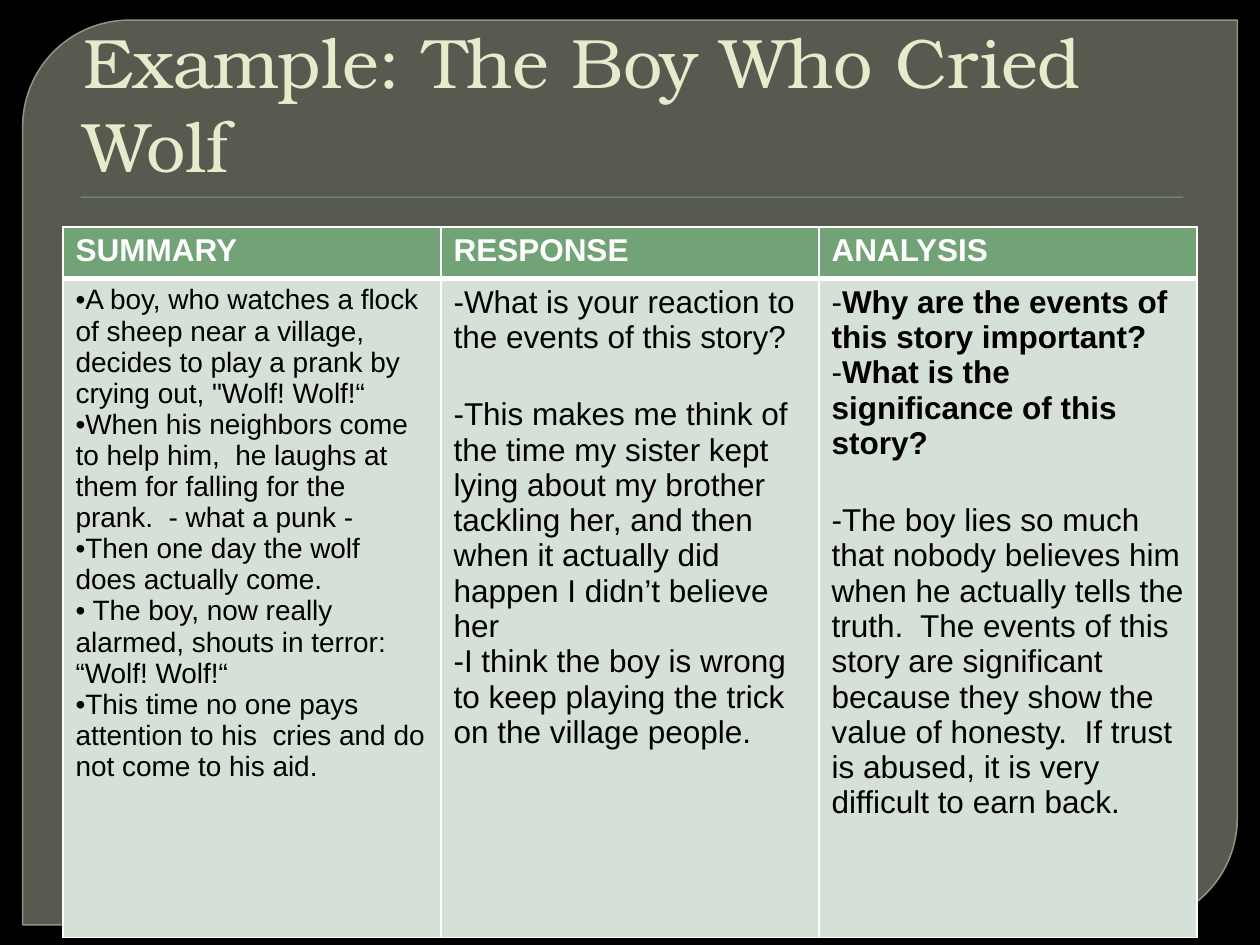
"""Build the summary, response and analysis slide for The Boy Who Cried Wolf."""
from dataclasses import dataclass

from lxml import etree
from pptx import Presentation
from pptx.dml.color import RGBColor
from pptx.enum.shapes import MSO_SHAPE
from pptx.enum.text import MSO_ANCHOR
from pptx.oxml.ns import qn
from pptx.util import Inches, Pt

PANEL_SHAPE = MSO_SHAPE.ROUND_2_DIAG_RECTANGLE
RULE_SHAPE = MSO_SHAPE.RECTANGLE
BOTTOM = MSO_ANCHOR.BOTTOM

BLACK = RGBColor(0x00, 0x00, 0x00)
WHITE = RGBColor(0xFF, 0xFF, 0xFF)
PANEL_FILL = RGBColor(0x88, 0x8B, 0x7B)
PANEL_LINE = RGBColor(0x9D, 0xA0, 0x90)
GREEN = RGBColor(0x72, 0xA3, 0x76)
PALE_GREEN = RGBColor(0xD5, 0xE0, 0xD6)
CREAM = RGBColor(0xE7, 0xEA, 0xCB)

BODY_FONT = "Arial"
TITLE_FONT = "TeX Gyre Bonum"
WIDTH, HEIGHT = Inches(10), Inches(7.5)
HEADER_HEIGHT, BODY_HEIGHT = Inches(0.41), Inches(5.23)
SECTION_GAP = Pt(24)


@dataclass(frozen=True)
class Point:
    """One bulleted paragraph."""
    text: str
    bold: bool = False
    new_section: bool = False


@dataclass(frozen=True)
class Column:
    """One table column with its heading and points."""
    heading: str
    bullet: str
    size: int
    points: tuple[Point, ...]


COLUMNS = (
    Column("SUMMARY", "•", 16, (
        Point("A boy, who watches a flock of sheep near a village, decides to play "
              "a prank by crying out, \"Wolf! Wolf!“"),
        Point("When his neighbors come to help him,  he laughs at them for falling "
              "for the prank.  - what a punk -"),
        Point("Then one day the wolf does actually come."),
        Point(" The boy, now really alarmed, shouts in terror: “Wolf! Wolf!“"),
        Point("This time no one pays attention to his  cries and do not come to his aid."),
    )),
    Column("RESPONSE", "-", 18, (
        Point("What is your reaction to the events of this story?"),
        Point("This makes me think of the time my sister kept lying about my brother  "
              "tackling her, and then when it actually did happen I didn’t believe her",
              new_section=True),
        Point("I think the boy is wrong to keep playing the trick on the village people."),
    )),
    Column("ANALYSIS", "-", 18, (
        Point("Why are the events of this story important?", bold=True),
        Point("What is the significance of this story?", bold=True),
        Point("The boy lies so much that nobody believes him when he actually tells the "
              "truth.  The events of this story are significant because they show the "
              "value of honesty.  If trust is abused, it is very difficult to earn back.",
              new_section=True),
    )),
)


def share(left: float, top: float, width: float, height: float) -> tuple[int, ...]:
    """Turn percentages of the slide into a position and size."""
    return tuple(int(part * whole / 100) for part, whole in
                 zip((left, top, width, height), (WIDTH, HEIGHT, WIDTH, HEIGHT)))


def set_opacity(fill_parent, percent: int) -> None:
    """Make the solid fill inside an element partly transparent."""
    colour = fill_parent.find(qn("a:solidFill"))[0]
    etree.SubElement(colour, qn("a:alpha"), val=str(percent * 1000))


def style_text(paragraph, font: str, size: float, colour: RGBColor, bold: bool = False) -> None:
    """Format every run of a paragraph."""
    for run in paragraph.runs:
        run.font.name, run.font.size, run.font.bold = font, Pt(size), bold
        run.font.color.rgb = colour


def style_cell(cell, fill: RGBColor, bottom_width: float = 1) -> None:
    """Give a cell white borders and a solid fill."""
    properties = cell._tc.get_or_add_tcPr()
    for side, width in (("lnL", 1), ("lnR", 1), ("lnT", 1), ("lnB", bottom_width)):
        border = etree.SubElement(properties, qn(f"a:{side}"), w=str(Pt(width)))
        solid = etree.SubElement(border, qn("a:solidFill"))
        etree.SubElement(solid, qn("a:srgbClr"), val=str(WHITE))
    cell.fill.solid()
    cell.fill.fore_color.rgb = fill


def add_backdrop(slide) -> None:
    """Draw the dark panel and the rule below the title."""
    slide.background.fill.solid()
    slide.background.fill.fore_color.rgb = BLACK

    panel = slide.shapes.add_shape(PANEL_SHAPE, *share(1.8, 2.13, 96.4, 95.73))
    panel.adjustments[0], panel.adjustments[1] = 0.118, 0
    panel.line.color.rgb = PANEL_LINE
    panel.line.width = Pt(0.87)
    set_opacity(panel.line._ln, 88)

    rule = slide.shapes.add_shape(RULE_SHAPE, *share(6.4, 20.8, 87.5, 0.13))
    rule.line.fill.background()

    for shape, colour in ((panel, PANEL_FILL), (rule, GREEN)):
        shape.shadow.inherit = False
        shape.fill.solid()
        shape.fill.fore_color.rgb = colour
    set_opacity(panel._element.spPr, 65)


def add_title(slide, text: str) -> None:
    """Write the title, seated just above the rule."""
    frame = slide.shapes.add_textbox(*share(5, 3.73, 90, 16.67)).text_frame
    frame.word_wrap = True
    frame.vertical_anchor = BOTTOM
    frame.margin_left = Inches(0.16)
    frame.text = text
    style_text(frame.paragraphs[0], TITLE_FONT, 40, CREAM)


def fill_body(cell, column: Column) -> None:
    """Write the bulleted points of one column."""
    cell.text_frame.text = "\n".join(point.text for point in column.points)
    for paragraph, point in zip(cell.text_frame.paragraphs, column.points):
        style_text(paragraph, BODY_FONT, column.size, BLACK, point.bold)
        if point.new_section:
            paragraph.space_before = SECTION_GAP
        properties = paragraph._p.get_or_add_pPr()
        properties.set("marL", "0")
        properties.set("indent", "0")
        etree.SubElement(properties, qn("a:buFont"), typeface=BODY_FONT)
        etree.SubElement(properties, qn("a:buChar"), char=column.bullet)


def add_comparison(slide, columns: tuple[Column, ...]) -> None:
    """Draw the table of headings and points."""
    table = slide.shapes.add_table(2, len(columns), *share(5, 24, 90, 75.2)).table
    table.rows[0].height, table.rows[1].height = HEADER_HEIGHT, BODY_HEIGHT
    for index, column in enumerate(columns):
        heading, body = table.cell(0, index), table.cell(1, index)
        heading.text_frame.text = column.heading
        style_text(heading.text_frame.paragraphs[0], BODY_FONT, 18, WHITE, True)
        style_cell(heading, GREEN, bottom_width=3)
        fill_body(body, column)
        style_cell(body, PALE_GREEN)


def main() -> None:
    """Build and save the slide."""
    deck = Presentation()
    deck.slide_width, deck.slide_height = WIDTH, HEIGHT
    slide = deck.slides.add_slide(deck.slide_layouts[6])
    add_backdrop(slide)
    add_comparison(slide, COLUMNS)
    add_title(slide, "Example: The Boy Who Cried Wolf")
    deck.save("out.pptx")


if __name__ == "__main__":
    main()
